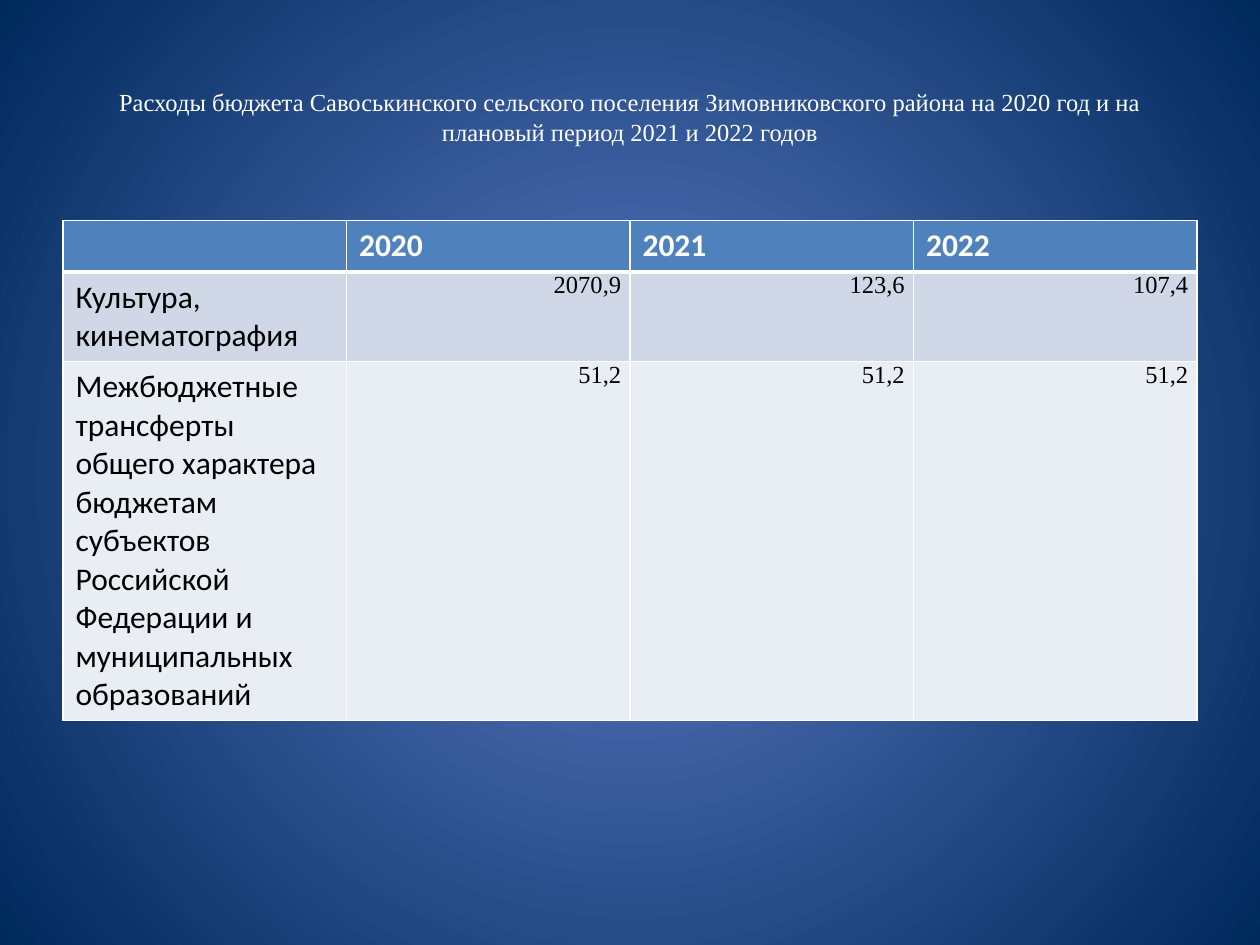
import lxml.etree
import pptx
import pptx.dml.color
import pptx.enum.text
import pptx.oxml
import pptx.oxml.ns
import pptx.util

COLORS = {
    "glow": "5E7CC5", "edge": "00295C", "white": "FFFFFF", "black": "000000",
    "header": "4F81BD", "odd": "D0D8E8", "even": "E9EDF4",
}
TITLE = ("Расходы бюджета Савоськинского сельского поселения Зимовниковского района "
         "на 2020 год и на плановый период 2021 и 2022 годов")
ROWS = [
    ("", "2020", "2021", "2022"),
    ("Культура, кинематография", "2070,9", "123,6", "107,4"),
    ("Межбюджетные трансферты общего характера бюджетам субъектов Российской "
     "Федерации и муниципальных образований", "51,2", "51,2", "51,2"),
]
ALIGN = pptx.enum.text.PP_ALIGN


def format_text(tf, font, size, color, bold=False, align=ALIGN.LEFT):
    """Format every paragraph and run of a text frame."""
    for p in tf.paragraphs:
        p.alignment = align
        for r in p.runs:
            r.font.name, r.font.size, r.font.bold = font, pptx.util.Pt(size), bold
            r.font.color.rgb = pptx.dml.color.RGBColor.from_string(COLORS[color])


def set_background(s):
    """Fill the slide background with a gradient spreading from the centre."""
    s.background.fill.solid()
    bg_pr = s.background._cSld.bg.bgPr
    gradient = pptx.oxml.parse_xml(
        f'<a:gradFill {pptx.oxml.ns.nsdecls("a")} rotWithShape="1"><a:gsLst>'
        f'<a:gs pos="0"><a:srgbClr val="{COLORS["glow"]}"/></a:gs>'
        f'<a:gs pos="100000"><a:srgbClr val="{COLORS["edge"]}"/></a:gs></a:gsLst>'
        '<a:path path="circle"><a:fillToRect l="50000" t="50000" r="50000" b="50000"/>'
        '</a:path></a:gradFill>')
    bg_pr.replace(bg_pr[0], gradient)


def set_borders(cell, bottom=1, top=1):
    """Draw white lines around a cell, with widths in points."""
    tc_pr = cell._tc.get_or_add_tcPr()
    for side, width in (("L", 1), ("R", 1), ("T", top), ("B", bottom)):
        tc_pr.append(pptx.oxml.parse_xml(
            f'<a:ln{side} {pptx.oxml.ns.nsdecls("a")} w="{pptx.util.Pt(width)}">'
            f'<a:solidFill><a:srgbClr val="{COLORS["white"]}"/></a:solidFill></a:ln{side}>'))


def add_title(s, x, y, w, h):
    """Place the title in the given box."""
    sp = s.shapes.title
    sp.left, sp.top, sp.width, sp.height = x, y, w, h
    tf = sp.text_frame
    tf.text = TITLE
    tf.vertical_anchor = pptx.enum.text.MSO_ANCHOR.MIDDLE
    format_text(tf, "Times New Roman", 14, "white", align=ALIGN.CENTER)


def add_budget_table(s, x, y, w, row_height):
    """Place the expenditure table with equal columns and rows that grow with text."""
    table = s.shapes.add_table(len(ROWS), len(ROWS[0]), x, y, w, row_height * len(ROWS)).table
    for i, values in enumerate(ROWS):
        for j, value in enumerate(values):
            cell = table.cell(i, j)
            cell.text_frame.text = value
            set_borders(cell, bottom=3 if i == 0 else 1, top=3 if i == 1 else 1)
            cell.fill.solid()
            fill = COLORS[("header", "odd", "even")[i]]
            cell.fill.fore_color.rgb = pptx.dml.color.RGBColor.from_string(fill)
            if i == 0:
                format_text(cell.text_frame, "Calibri", 18, "white", bold=True)
            elif j == 0:
                format_text(cell.text_frame, "Calibri", 18, "black")
            else:
                cell.margin_left = cell.margin_right = pptx.util.Inches(0.07)
                cell.margin_top = cell.margin_bottom = 0
                format_text(cell.text_frame, "Times New Roman", 14, "black", align=ALIGN.RIGHT)


def main():
    """Build the budget slide and save it."""
    prs = pptx.Presentation()
    prs.slide_width, prs.slide_height = pptx.util.Inches(10), pptx.util.Inches(7.5)
    w, h = prs.slide_width, prs.slide_height
    s = prs.slides.add_slide(prs.slide_layouts[5])
    set_background(s)
    add_title(s, int(w * 0.05), int(h * 0.04), int(w * 0.9), pptx.util.Inches(1.25))
    add_budget_table(s, int(w * 0.05), pptx.util.Inches(1.75), int(w * 0.9),
                     pptx.util.Inches(0.41))
    prs.save("out.pptx")


if __name__ == "__main__":
    main()
